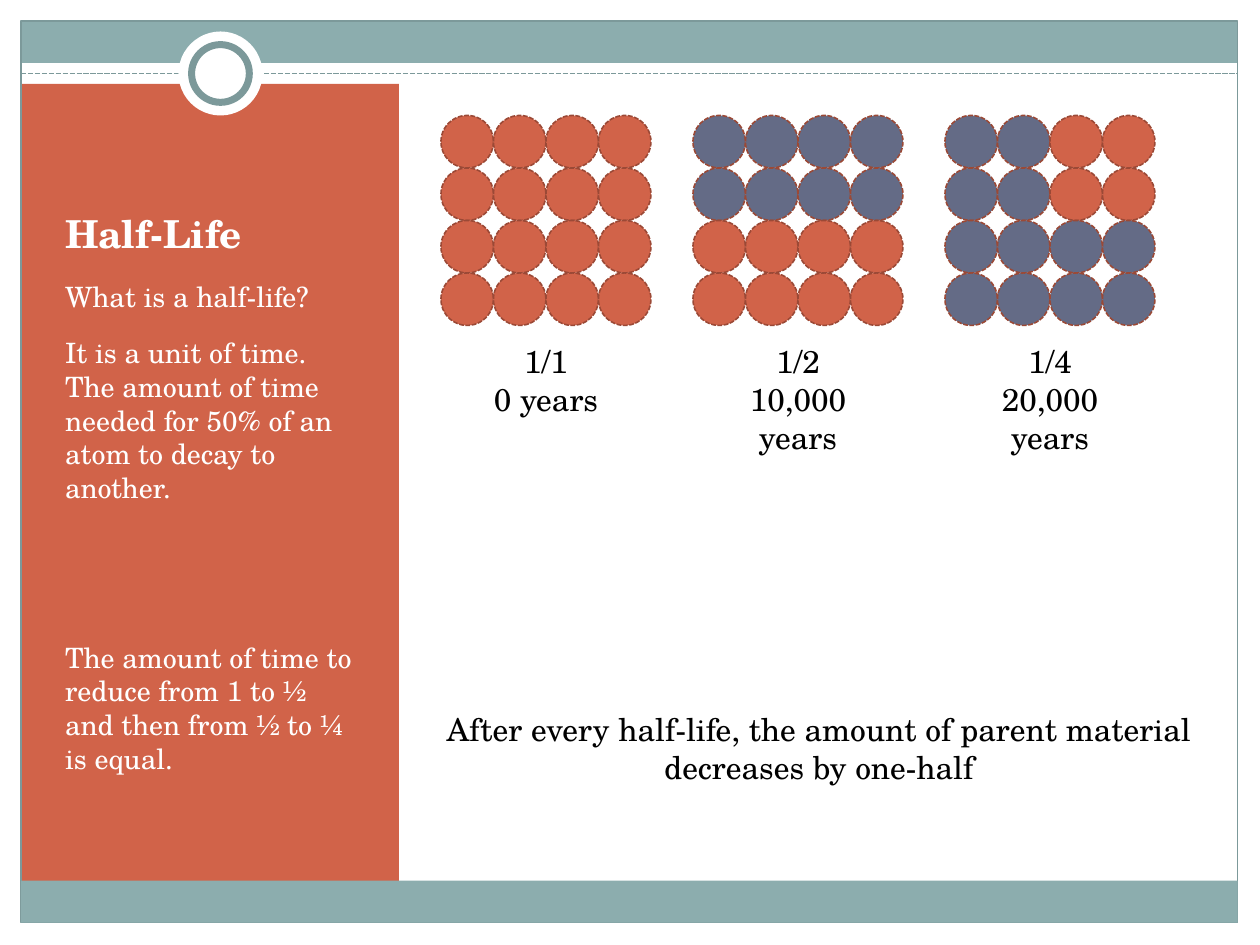
"""Build a slide that explains half-life with three grids of atoms."""
from lxml import etree
from pptx import Presentation
from pptx import util as u
from pptx.dml.color import RGBColor
from pptx.enum import dml, shapes, text
from pptx.oxml import ns

FONT = "TeX Gyre Schola"
TEAL, EDGE, WHITE, BLACK = "8CADAE", "7C999A", "FFFFFF", "000000"
PARENT, DAUGHTER, ATOM_EDGE = "D16349", "646B86", "9B4936"
RECT, OVAL = shapes.MSO_SHAPE.RECTANGLE, shapes.MSO_SHAPE.OVAL
ATOM, GRID_LEFT, GRID_TOP, GRID_STEP = 40, 336, 88, 192
STAGES = [
    (("PPPP", "PPPP", "PPPP", "PPPP"), ("1/1", "0 years"), 68),
    (("DDDD", "DDDD", "PPPP", "PPPP"), ("1/2", "10,000 years"), 97),
    (("DDPP", "DDPP", "DDDD", "DDDD"), ("1/4", "20,000 years"), 97),
]
BODY = [
    "What is a half-life?",
    "It is a unit of time. The amount of time needed for 50% of an atom to decay to another.",
    "The amount of time to reduce from 1 to ½ and then from ½ to ¼ is equal.",
]
SUMMARY = "After every half-life, the amount of parent material decreases by one-half"


def px(*lengths):
    return [u.Emu(length * 9525) for length in lengths]


def color(value):
    return RGBColor.from_string(value)


def style_line(line, value, width, dashed=False):
    line.color.rgb = color(value)
    line.width = u.Pt(width)
    if dashed:
        line.dash_style = dml.MSO_LINE.SQUARE_DOT


def add_figure(page, kind, place, fill=None, edge=None, width=0.75, dashed=False):
    figure = page.shapes.add_shape(kind, *px(*place))
    figure.shadow.inherit = False
    if fill:
        figure.fill.solid()
        figure.fill.fore_color.rgb = color(fill)
    else:
        figure.fill.background()
    if edge:
        style_line(figure.line, edge, width, dashed)
    else:
        figure.line.fill.background()


def add_rule(page, ends):
    rule = page.shapes.add_connector(shapes.MSO_CONNECTOR.STRAIGHT, *px(*ends))
    style_line(rule.line, EDGE, 1, dashed=True)
    etree.SubElement(rule.element.spPr, ns.qn("a:effectLst"))


def write(box, lines, size, value, align, bold=False):
    frame = box.text_frame
    frame.word_wrap = True
    frame.auto_size = text.MSO_AUTO_SIZE.NONE
    frame.text = "\n".join(lines)
    for para in frame.paragraphs:
        para.alignment = align
        for span in para.runs:
            span.font.name, span.font.size, span.font.bold = FONT, u.Pt(size), bold
            span.font.color.rgb = color(value)


def add_label(page, place, lines):
    box = page.shapes.add_textbox(*px(*place))
    write(box, lines, 18, BLACK, text.PP_ALIGN.CENTER)


def fill_placeholder(holder, place, lines, size, bold=False):
    holder.left, holder.top, holder.width, holder.height = px(*place)
    write(holder, lines, size, WHITE, text.PP_ALIGN.LEFT, bold)
    holder.element.getparent().append(holder.element)


def add_frame(page):
    add_figure(page, RECT, (16, 16, 927, 32), TEAL)
    for margin in [(0, 704, 960, 16), (944, 0, 16, 720), (0, 0, 960, 12), (0, 0, 16, 720)]:
        add_figure(page, RECT, margin, WHITE)
    add_figure(page, RECT, (16, 64, 288, 616), PARENT)
    add_figure(page, RECT, (16, 16, 927, 687), edge=EDGE)
    add_rule(page, (16, 56, 943, 56))
    add_figure(page, OVAL, (136, 24, 64, 64), WHITE)
    add_figure(page, OVAL, (146, 34, 44, 44), WHITE, EDGE, 4)
    add_figure(page, RECT, (16, 671, 927, 32), TEAL)


def add_side_text(page):
    title, body = page.placeholders
    fill_placeholder(title, (40, 96, 248, 104), ["Half-Life"], 22, bold=True)
    title.text_frame.vertical_anchor = text.MSO_ANCHOR.BOTTOM
    fill_placeholder(body, (40, 208, 248, 435), BODY, 16)
    body.text_frame.margin_right, = px(17)
    for para in body.text_frame.paragraphs:
        para.space_after = u.Pt(10)
        props = para._p.get_or_add_pPr()
        props.set("marL", "0")
        props.set("indent", "0")
        etree.SubElement(props, ns.qn("a:buNone"))
    body.text_frame.paragraphs[-1].space_before = u.Pt(68)


def add_atoms(page, left, rows):
    for row, kinds in enumerate(rows):
        for column, kind in enumerate(kinds):
            place = (left + column * ATOM, GRID_TOP + row * ATOM, ATOM, ATOM)
            fill = PARENT if kind == "P" else DAUGHTER
            add_figure(page, OVAL, place, fill, ATOM_EDGE, 0.9, dashed=True)


def main():
    deck = Presentation()
    deck.slide_width, deck.slide_height = px(960, 720)
    page = deck.slides.add_slide(deck.slide_layouts[1])
    add_frame(page)
    add_side_text(page)
    for index, (rows, caption, height) in enumerate(STAGES):
        left = GRID_LEFT + index * GRID_STEP
        add_atoms(page, left, rows)
        add_label(page, (left + 8, 256, 144, height), caption)
    add_label(page, (328, 536, 592, 68), [SUMMARY])
    deck.save("out.pptx")


if __name__ == "__main__":
    main()
